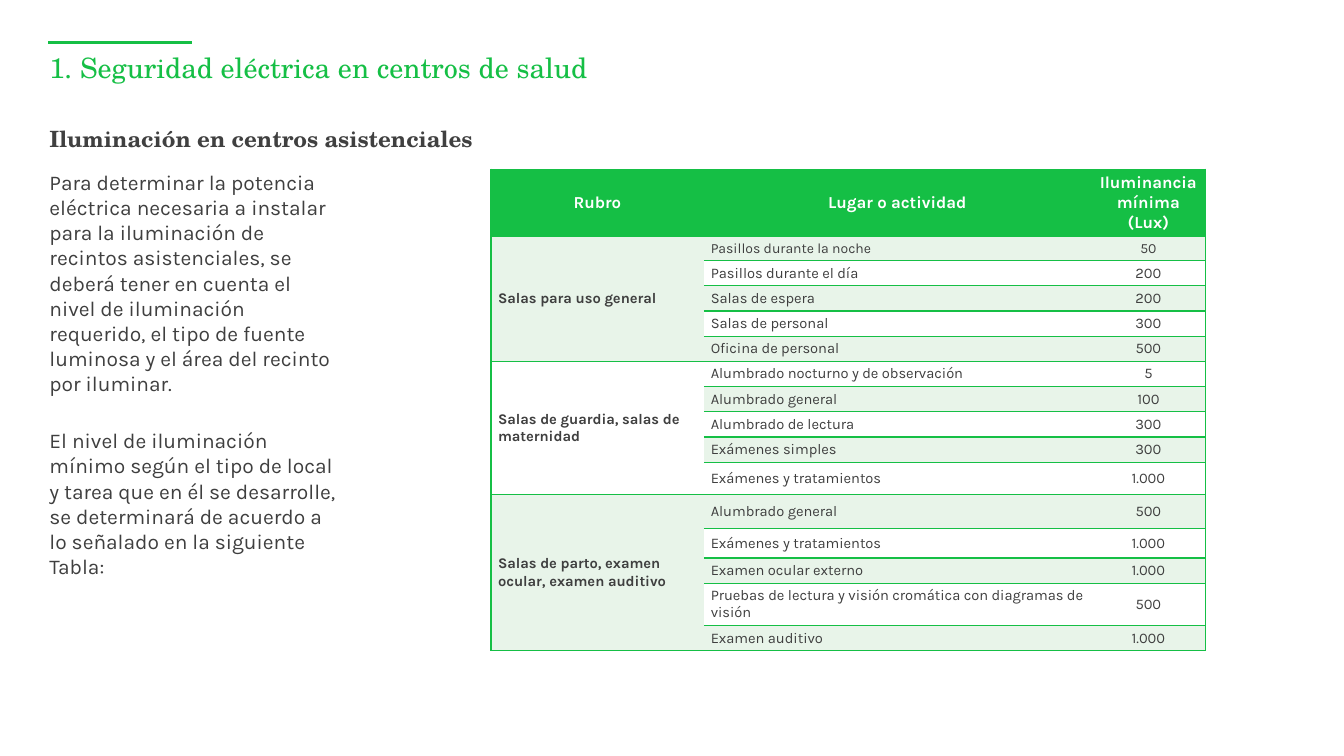
"""Build a slide on lighting levels in health centres."""
import pptx
import pptx.util
import pptx.oxml
import pptx.dml.color
import pptx.enum.shapes
import pptx.enum.text

TITLE = "1. Seguridad eléctrica en centros de salud"
HEADING = "Iluminación en centros asistenciales"
BODY = [
    "Para determinar la potencia eléctrica necesaria a instalar para la iluminación de "
    "recintos asistenciales, se deberá tener en cuenta el nivel de iluminación requerido, "
    "el tipo de fuente luminosa y el área del recinto por iluminar.",
    "El nivel de iluminación mínimo según el tipo de local y tarea que en él se desarrolle, "
    "se determinará de acuerdo a lo señalado en la siguiente Tabla:",
]
HEADS = ["Rubro", "Lugar o actividad", "Iluminancia mínima (Lux)"]
GROUPS = [
    ("Salas para uso general", [
        ("Pasillos durante la noche", "50", 0.23),
        ("Pasillos durante el día", "200", 0.23),
        ("Salas de espera", "200", 0.23),
        ("Salas de personal", "300", 0.23),
        ("Oficina de personal", "500", 0.23)]),
    ("Salas de guardia, salas de maternidad", [
        ("Alumbrado nocturno y de observación", "5", 0.25),
        ("Alumbrado general", "100", 0.25),
        ("Alumbrado de lectura", "300", 0.23),
        ("Exámenes simples", "300", 0.25),
        ("Exámenes y tratamientos", "1.000", 0.32)]),
    ("Salas de parto, examen ocular, examen auditivo", [
        ("Alumbrado general", "500", 0.34),
        ("Exámenes y tratamientos", "1.000", 0.29),
        ("Examen ocular externo", "1.000", 0.24),
        ("Pruebas de lectura y visión cromática con diagramas de visión", "500", 0.39),
        ("Examen auditivo", "1.000", 0.24)]),
]
WIDTHS = [2.11, 3.84, 1.14]
HEAD_H = 0.61
HEX = {"green": "15BF45", "tint": "E8F4E9", "white": "FFFFFF",
       "dark": "404040", "text": "3F3F3F"}
SERIF, SANS = "TeX Gyre Schola", "Karla"

Inches, Pt = pptx.util.Inches, pptx.util.Pt
LEFT, MID = pptx.enum.text.PP_ALIGN.LEFT, pptx.enum.text.PP_ALIGN.CENTER
ANCHOR = pptx.enum.text.MSO_ANCHOR


def color(name):
    return pptx.dml.color.RGBColor.from_string(HEX[name])


def write(frame, lines, font, hue, align=LEFT, **form):
    frame.text = "\n".join(lines)
    frame.word_wrap = True
    for para in frame.paragraphs:
        para.alignment = align
        for key, value in form.items():
            setattr(para, key, value)
        for run in para.runs:
            for key, value in font.items():
                setattr(run.font, key, value)
            run.font.color.rgb = color(hue)


def place(shape, box):
    for key, value in zip(("left", "top", "width", "height"), box):
        setattr(shape, key, Inches(value))
    frame = shape.text_frame
    for side in ("left", "top", "right", "bottom"):
        setattr(frame, "margin_" + side, 0)
    frame.auto_size = pptx.enum.text.MSO_AUTO_SIZE.NONE
    frame.vertical_anchor = ANCHOR.TOP
    return frame


def edge(cell, sides):
    props = cell._tc.get_or_add_tcPr()
    for spot, side in enumerate("LRTB"):
        ink = (f'<a:solidFill><a:srgbClr val="{HEX["green"]}"/></a:solidFill>'
               if side in sides else "<a:noFill/>")
        props.insert(spot, pptx.oxml.parse_xml(
            f'<a:ln{side} xmlns:a="http://schemas.openxmlformats.org/drawingml/2006/main"'
            f' w="12700">{ink}</a:ln{side}>'))


def fill_cell(cell, row, col, text):
    head = row == 0
    for side, gap in (("left", 0.07), ("right", 0.07), ("top", 0.04), ("bottom", 0.04)):
        setattr(cell, "margin_" + side, Inches(gap))
    cell.vertical_anchor = ANCHOR.MIDDLE
    cell.fill.solid()
    cell.fill.fore_color.rgb = color("green" if head else "tint" if row % 2 else "white")
    edge(cell, ("" if cell.is_spanned else "TB") + ("L", "", "R")[col])
    if text:
        size = 12 if head else 10 if row == 1 and col else 10.5
        font = {"name": SANS, "size": Pt(size), "bold": head or col == 0}
        write(cell.text_frame, [text], font, "white" if head else "text",
              MID if head or col == 2 else LEFT)


def add_grid(slide):
    rows, spans = [(HEADS, HEAD_H)], []
    for name, items in GROUPS:
        spans.append((len(rows), len(rows) + len(items) - 1))
        for n, (task, lux, high) in enumerate(items):
            rows.append(((name if n == 0 else "", task, lux), high))
    total = sum(high for _, high in rows)
    grid = slide.shapes.add_table(len(rows), len(WIDTHS), Inches(4.87), Inches(1.68),
                                  Inches(sum(WIDTHS)), Inches(total)).table
    for col, wide in zip(grid.columns, WIDTHS):
        col.width = Inches(wide)
    for first, last in spans:
        grid.cell(first, 0).merge(grid.cell(last, 0))
    for r, (texts, high) in enumerate(rows):
        grid.rows[r].height = Inches(high)
        for c, text in enumerate(texts):
            fill_cell(grid.cell(r, c), r, c, text)


def main():
    deck = pptx.Presentation()
    deck.slide_width, deck.slide_height = Inches(13.33), Inches(7.5)
    slide = deck.slides.add_slide(deck.slide_layouts[5])
    shapes = slide.shapes

    rule = shapes.add_connector(pptx.enum.shapes.MSO_CONNECTOR.STRAIGHT,
                                Inches(0.48), Inches(0.42), Inches(1.9), Inches(0.42))
    rule.line.color.rgb = color("green")
    rule.line.width = Pt(1.75)
    rule._element.spPr.append(pptx.oxml.parse_xml(
        '<a:effectLst xmlns:a="http://schemas.openxmlformats.org/drawingml/2006/main"/>'))

    write(place(shapes.title, (0.49, 0.54, 10.79, 0.57)), [TITLE],
          {"name": SERIF, "size": Pt(20)}, "green", line_spacing=0.9)
    write(place(shapes.add_textbox(0, 0, 0, 0), (0.49, 1.27, 10.79, 0.39)), [HEADING],
          {"name": SERIF, "size": Pt(16), "bold": True}, "dark", line_spacing=0.9)
    body = place(shapes.add_textbox(0, 0, 0, 0), (0.49, 1.68, 2.85, 4.52))
    write(body, BODY, {"name": SANS, "size": Pt(15)}, "text")
    body.paragraphs[1].space_before = Pt(22.5)
    add_grid(slide)
    deck.save("out.pptx")


if __name__ == "__main__":
    main()
